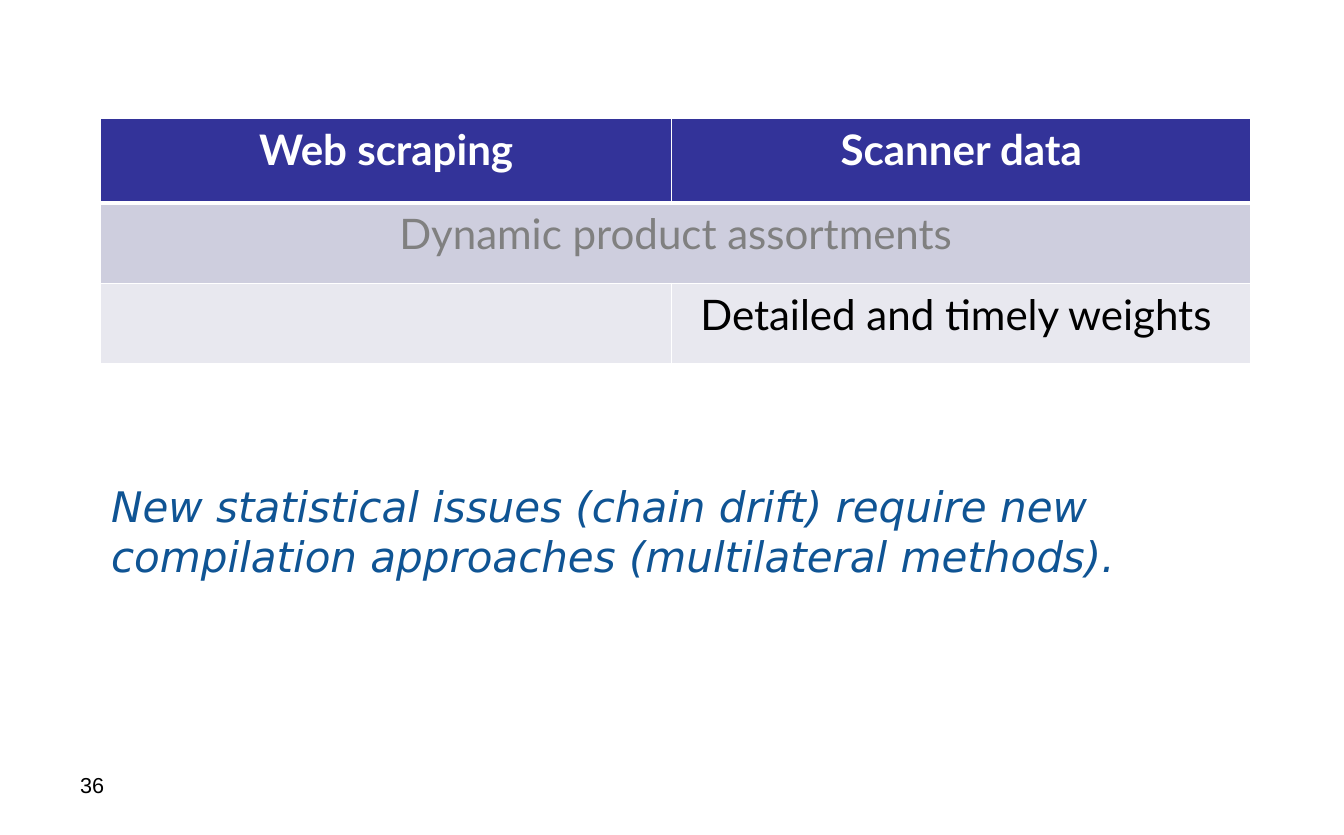
from dataclasses import dataclass

from lxml.etree import SubElement
from pptx import Presentation
from pptx.dml.color import RGBColor
from pptx.enum.text import PP_ALIGN
from pptx.oxml.ns import qn
from pptx.slide import Slide
from pptx.table import _Cell
from pptx.text.text import _Paragraph
from pptx.util import Cm, Pt

COLORS = {
    "white": "FFFFFF",
    "black": "000000",
    "gray": "808080",
    "header": "333399",
    "band_dark": "CECEDE",
    "band_light": "E8E8EF",
    "statement": "0F5494",
}
MARGIN = 2.36
COLUMN_WIDTHS = (13.41, 13.59)
THIN, THICK = 1, 3


@dataclass(frozen=True)
class TableRow:
    texts: tuple[str, ...]
    height: float
    fill: str
    color: str
    bold: bool = False
    merged: bool = False
    top_border: int = THIN
    bottom_border: int = THIN


@dataclass(frozen=True)
class TextBox:
    text: str
    left: float
    top: float
    width: float
    height: float
    font: dict


ROWS = (
    TableRow(("Web scraping", "Scanner data"), 1.98, "header", "white",
             bold=True, bottom_border=THICK),
    TableRow(("Dynamic product assortments", ""), 1.88, "band_dark", "gray",
             merged=True, top_border=THICK),
    TableRow(("", "Detailed and timely weights "), 1.88, "band_light", "black"),
)
TEXT_BOXES = (
    TextBox("36", 1.63, 18.01, 7.37, 1.37,
            {"name": "Arial", "size": Pt(14.4), "color": "black"}),
    TextBox("New statistical issues (chain drift) require new compilation "
            "approaches (multilateral methods).",
            MARGIN, 11.15, sum(COLUMN_WIDTHS), 2.64,
            {"name": "DejaVu Sans", "size": Pt(28), "italic": True,
             "color": "statement"}),
)


def rgb(name: str) -> RGBColor:
    return RGBColor.from_string(COLORS[name])


def add_text(paragraph: _Paragraph, text: str, font_values: dict) -> None:
    run = paragraph.add_run()
    run.text = text
    for name, value in font_values.items():
        if name == "color":
            run.font.color.rgb = rgb(value)
        else:
            setattr(run.font, name, value)


def add_borders(cell: _Cell, row: TableRow) -> None:
    """Draw white cell borders; call before the cell is filled."""
    properties = cell._tc.get_or_add_tcPr()
    widths = {"L": THIN, "R": THIN, "T": row.top_border, "B": row.bottom_border}
    for side, width in widths.items():
        line = SubElement(properties, qn(f"a:ln{side}"), w=str(Pt(width)))
        fill = SubElement(line, qn("a:solidFill"))
        SubElement(fill, qn("a:srgbClr"), val=COLORS["white"])


def add_comparison_table(slide: Slide) -> None:
    height = sum(row.height for row in ROWS)
    table = slide.shapes.add_table(
        len(ROWS), len(COLUMN_WIDTHS), Cm(MARGIN), Cm(2.79),
        Cm(sum(COLUMN_WIDTHS)), Cm(height)).table
    table.first_row = table.horz_banding = False
    for column, width in zip(table.columns, COLUMN_WIDTHS):
        column.width = Cm(width)
    for row_index, row in enumerate(ROWS):
        table.rows[row_index].height = Cm(row.height)
        for column_index, text in enumerate(row.texts):
            cell = table.cell(row_index, column_index)
            add_borders(cell, row)
            cell.fill.solid()
            cell.fill.fore_color.rgb = rgb(row.fill)
            if text:
                paragraph = cell.text_frame.paragraphs[0]
                paragraph.alignment = PP_ALIGN.CENTER
                add_text(paragraph, text, {"name": "Lato", "size": Pt(28),
                                           "bold": row.bold, "color": row.color})
        if row.merged:
            table.cell(row_index, 0).merge(
                table.cell(row_index, len(COLUMN_WIDTHS) - 1))


def add_text_box(slide: Slide, box: TextBox) -> None:
    shape = slide.shapes.add_textbox(
        Cm(box.left), Cm(box.top), Cm(box.width), Cm(box.height))
    shape.text_frame.word_wrap = True
    add_text(shape.text_frame.paragraphs[0], box.text, box.font)


def main() -> None:
    presentation = Presentation()
    presentation.slide_width = Cm(31.55)
    presentation.slide_height = Cm(19.61)
    slide = presentation.slides.add_slide(presentation.slide_layouts[6])
    add_comparison_table(slide)
    for box in TEXT_BOXES:
        add_text_box(slide, box)
    presentation.save("out.pptx")


if __name__ == "__main__":
    main()
